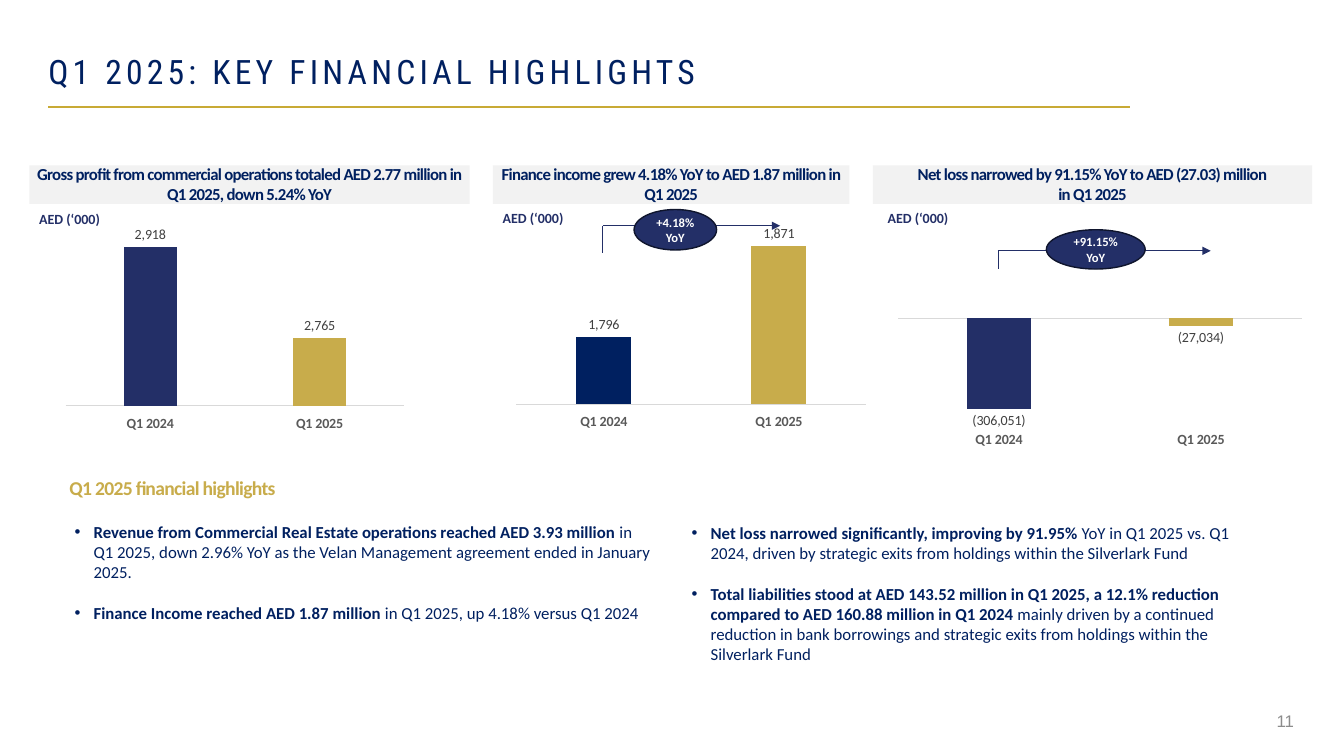
from lxml import etree
from pptx import Presentation
from pptx.chart.data import CategoryChartData
from pptx.dml.color import RGBColor
from pptx.enum.chart import XL_CHART_TYPE as ChartType, XL_LABEL_POSITION as LabelPos
from pptx.enum.chart import XL_TICK_LABEL_POSITION as TickLabels, XL_TICK_MARK as TickMark
from pptx.enum.shapes import MSO_CONNECTOR as Connector, MSO_SHAPE as Shape
from pptx.enum.text import MSO_ANCHOR as Anchor, PP_ALIGN as Align
from pptx.oxml.ns import qn
from pptx.util import Cm, Pt

COLORS = {name: RGBColor.from_string(value) for name, value in {
    "navy": "002060", "indigo": "232F67", "gold": "C8AC4B", "rule": "C8AA35",
    "band": "F2F2F2", "axis": "D9D9D9", "label": "404040", "category": "595959",
    "page": "8C8C8C", "edge": "0F152D", "white": "FFFFFF"}.items()}

prs = Presentation()
prs.slide_width, prs.slide_height = Cm(33.87), Cm(19.05)
slide = prs.slides.add_slide(prs.slide_layouts[6])


def write(box, paragraphs, size=12, color="navy", font="Calibri", bold=False, align=Align.LEFT,
          anchor=Anchor.TOP, inset=(0, 0), leading=None, tracking=None, bullet=False,
          gap=0, wrap=True):
    """Fill a shape; each paragraph is a string or a (bold lead, plain rest) pair."""
    frame = box.text_frame
    frame.word_wrap, frame.vertical_anchor = wrap, anchor
    frame.margin_left = frame.margin_right = Cm(inset[0])
    frame.margin_top = frame.margin_bottom = Cm(inset[1])
    for i, content in enumerate(paragraphs):
        paragraph = frame.add_paragraph() if i else frame.paragraphs[0]
        paragraph.alignment = align
        if leading:
            paragraph.line_spacing = leading
        if i and gap:
            paragraph.space_before = Pt(gap)
        if bullet:
            props = paragraph._p.get_or_add_pPr()
            props.set("marL", str(Cm(0.48)))
            props.set("indent", str(-Cm(0.48)))
            etree.SubElement(props, qn("a:buFont")).set("typeface", "Arial")
            etree.SubElement(props, qn("a:buChar")).set("char", "•")
        parts = [(content, bold)] if isinstance(content, str) else zip(content, (True, False))
        for words, strong in parts:
            run = paragraph.add_run()
            run.text = words
            run.font.size, run.font.name, run.font.bold = Pt(size), font, strong
            run.font.color.rgb = COLORS[color]
            if tracking:
                run.font._element.set("spc", str(int(tracking * 100)))


def draw_line(x1, y1, x2, y2, color, width, arrow=False):
    line = slide.shapes.add_connector(Connector.STRAIGHT, Cm(x1), Cm(y1), Cm(x2), Cm(y2))
    line.line.color.rgb, line.line.width = COLORS[color], Pt(width)
    if arrow:
        etree.SubElement(line.line._get_or_add_ln(), qn("a:tailEnd")).set("type", "triangle")
    etree.SubElement(line._element.spPr, qn("a:effectLst"))


# Title and page number
draw_line(1.22, 2.69, 28.47, 2.69, "rule", 1.5)
title = slide.shapes.add_textbox(Cm(1.22), Cm(1.4), Cm(27.25), Cm(1.07))
write(title, ["Q1 2025: KEY FINANCIAL HIGHLIGHTS"], size=24, font="Roboto Condensed",
      leading=0.9, tracking=3)
page_number = slide.shapes.add_textbox(Cm(24.99), Cm(17.91), Cm(7.62), Cm(0.51))
write(page_number, ["11"], font="Arial", color="page", align=Align.RIGHT, anchor=Anchor.MIDDLE)

# Three panels: caption band, unit, column chart and growth arrow
panels = [
    dict(caption=["Gross profit from commercial operations totaled AED 2.77 million in "
                  "Q1 2025, down 5.24% YoY"],
         band=(0.74, 11.1), unit=(0.74, 5.18), chart=(1.35, 5.56, 9.14, 5.38),
         values=(2918, 2765), scale=(2650, 2950), plot=(0.033, 0.033, 0.934, 0.835),
         first="indigo", growth=None),
    dict(caption=["Finance income grew 4.18% YoY to AED 1.87 million in Q1 2025"],
         band=(12.42, 8.99), unit=(12.42, 5.16), chart=(12.7, 5.69, 9.45, 5.18),
         values=(1796, 1871), scale=(1740, 1880), plot=(0.033, 0.046, 0.934, 0.822),
         first="navy", growth="+4.18% YoY",
         arrow=(15.19, 19.66, 5.69, 6.38), oval=(15.98, 5.28, 2.08, 1.02)),
    dict(caption=["Net loss narrowed by 91.15% YoY to AED (27.03) million", "in Q1 2025"],
         band=(22, 11.07), unit=(22.12, 5.16), chart=(22.38, 5.87, 10.9, 5.64),
         values=(-306051, -27034), scale=(-350000, 50000), plot=(0.023, 0.315, 0.934, 0.529),
         first="indigo", growth="+91.15% YoY",
         arrow=(25.15, 30.51, 6.32, 6.78), oval=(26.37, 5.79, 2.49, 0.99)),
]
for panel in panels:
    left, width = panel["band"]
    band = slide.shapes.add_shape(Shape.RECTANGLE, Cm(left), Cm(4.17), Cm(width), Cm(0.97))
    band.shadow.inherit = False
    band.fill.solid()
    band.fill.fore_color.rgb = COLORS["band"]
    band.line.fill.background()
    write(band, panel["caption"], bold=True, align=Align.CENTER, anchor=Anchor.MIDDLE,
          leading=0.95, tracking=-0.5)

    data = CategoryChartData(number_format="#,##0")
    data.categories = ["Q1 2024", "Q1 2025"]
    data.add_series("Series 1", panel["values"])
    chart = slide.shapes.add_chart(ChartType.COLUMN_CLUSTERED,
                                   *map(Cm, panel["chart"]), data).chart
    chart.has_legend = chart.has_title = False
    chart.font.size, chart.font.name = Pt(10), "Calibri"

    amounts, quarters = chart.value_axis, chart.category_axis
    amounts.minimum_scale, amounts.maximum_scale = panel["scale"]
    amounts.has_major_gridlines = amounts.visible = False
    quarters.tick_label_position = TickLabels.LOW
    quarters.major_tick_mark = quarters.minor_tick_mark = TickMark.NONE
    quarters.format.line.color.rgb, quarters.format.line.width = COLORS["axis"], Pt(0.75)
    quarter_font = quarters.tick_labels.font
    quarter_font.size, quarter_font.name, quarter_font.bold = Pt(10), "Calibri", True
    quarter_font.color.rgb = COLORS["category"]

    columns = chart.plots[0]
    columns.gap_width, columns.overlap, columns.vary_by_categories = 219, -27, False
    series = columns.series[0]
    series.invert_if_negative = False
    for i, color in enumerate((panel["first"], "gold")):
        fill = series.points[i].format.fill
        fill.solid()
        fill.fore_color.rgb = COLORS[color]
    labels = series.data_labels
    labels.show_value, labels.position = True, LabelPos.OUTSIDE_END
    labels.number_format, labels.number_format_is_linked = "#,##0;(#,##0)", False
    labels.font.size, labels.font.name = Pt(10), "Calibri"
    labels.font.color.rgb = COLORS["label"]

    plot_area = chart._chartSpace.chart.plotArea
    for old in plot_area.findall(qn("c:layout")):
        plot_area.remove(old)
    layout = etree.Element(qn("c:layout"))
    plot_area.insert(0, layout)
    manual = etree.SubElement(layout, qn("c:manualLayout"))
    settings = [("layoutTarget", "inner"), ("xMode", "edge"), ("yMode", "edge"),
                *zip("xywh", panel["plot"])]
    for tag, value in settings:
        etree.SubElement(manual, qn(f"c:{tag}")).set("val", str(value))

    unit = slide.shapes.add_textbox(*map(Cm, panel["unit"]), Cm(2.08), Cm(0.69))
    write(unit, ["AED (‘000)"], size=10, color="indigo", bold=True, inset=(0.25, 0.13),
          wrap=False)

    if panel["growth"]:
        start, end, top, bottom = panel["arrow"]
        draw_line(start, top, start, bottom, "indigo", 0.5)
        draw_line(start, top, end, top, "indigo", 0.5, arrow=True)
        oval = slide.shapes.add_shape(Shape.OVAL, *map(Cm, panel["oval"]))
        oval.shadow.inherit = False
        oval.fill.solid()
        oval.fill.fore_color.rgb = COLORS["indigo"]
        oval.line.color.rgb, oval.line.width = COLORS["edge"], Pt(1)
        write(oval, [panel["growth"]], size=9, color="white", bold=True, align=Align.CENTER,
              anchor=Anchor.MIDDLE, inset=(0.13, 0))

# Highlights in two columns
heading = slide.shapes.add_textbox(Cm(1.75), Cm(12.04), Cm(9.93), Cm(0.56))
write(heading, ["Q1 2025 financial highlights"], size=14, color="gold", bold=True,
      anchor=Anchor.MIDDLE, leading=0.95, tracking=-0.5)

highlights = [
    (1.55, 2.77, [
        ("Revenue from Commercial Real Estate operations reached AED 3.93 million ",
         "in Q1 2025, down 2.96% YoY as the Velan Management agreement ended in January 2025."),
        ("Finance Income reached AED 1.87 million ", "in Q1 2025, up 4.18% versus Q1 2024")]),
    (17.07, 3.78, [
        ("Net loss narrowed significantly, improving by 91.95% ",
         "YoY in Q1 2025 vs. Q1 2024, driven by strategic exits from holdings within the "
         "Silverlark Fund"),
        ("Total liabilities stood at AED 143.52 million in Q1 2025, a 12.1% reduction "
         "compared to AED 160.88 million in Q1 2024 ",
         "mainly driven by a continued reduction in bank borrowings and strategic exits from "
         "holdings within the Silverlark Fund")]),
]
for left, height, points in highlights:
    column = slide.shapes.add_shape(Shape.ROUND_2_DIAG_RECTANGLE, Cm(left), Cm(12.94),
                                    Cm(15.24), Cm(height))
    column.adjustments[0] = 0.1
    column.shadow.inherit = False
    column.fill.background()
    column.line.fill.background()
    write(column, points, bullet=True, gap=14.5, inset=(0.25, 0.13))

prs.save("out.pptx")
